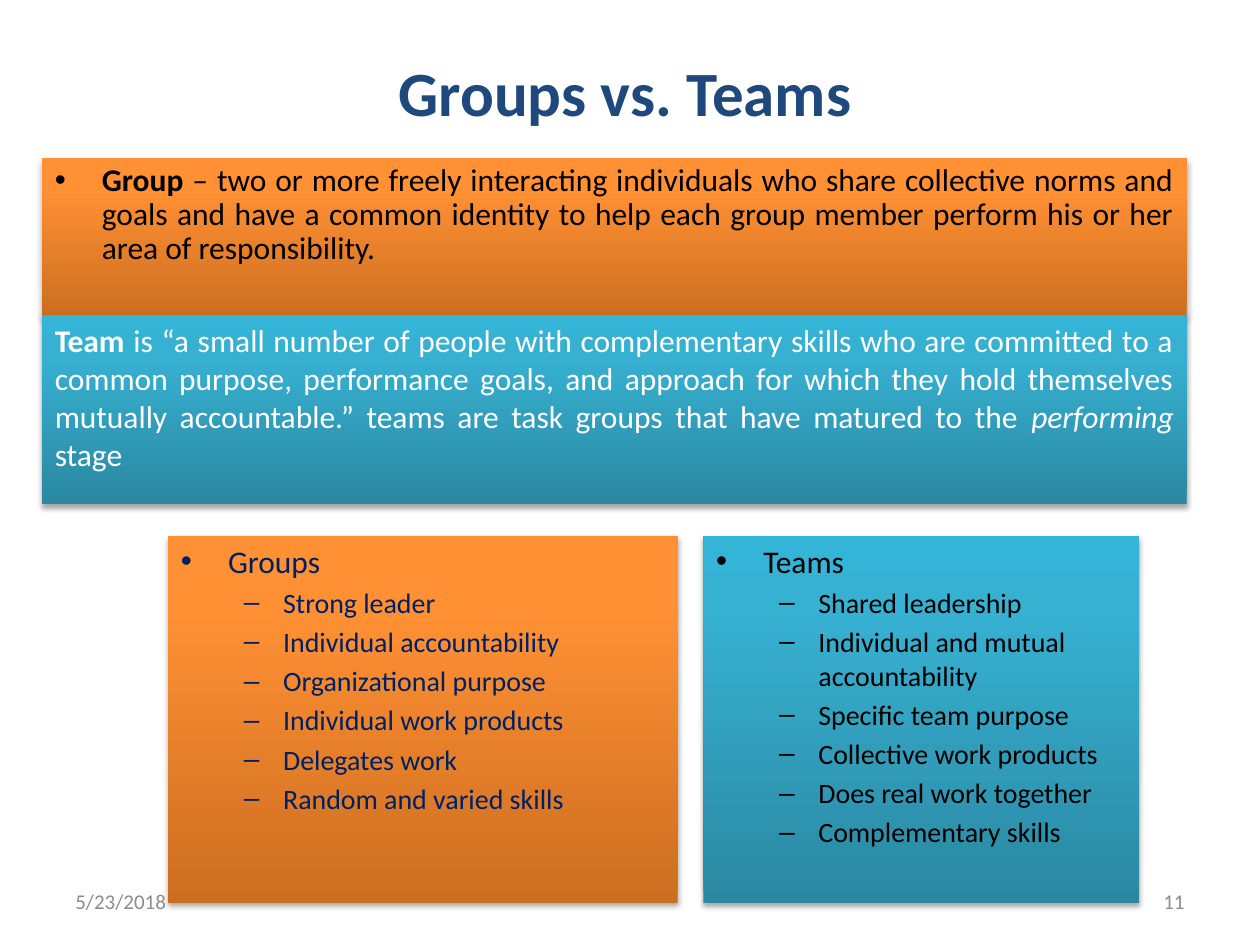
from pptx import Presentation
from pptx.dml.color import RGBColor
from pptx.enum.text import MSO_ANCHOR, MSO_AUTO_SIZE, PP_ALIGN
from pptx.oxml import parse_xml
from pptx.oxml.ns import nsdecls
from pptx.util import Cm, Pt

FONT = "Calibri"
TITLE_BLUE = RGBColor(0x1F, 0x49, 0x7D)
NAVY = RGBColor(0x00, 0x20, 0x60)
BLACK = RGBColor(0x00, 0x00, 0x00)
WHITE = RGBColor(0xFF, 0xFF, 0xFF)
GRAY = RGBColor(0x8C, 0x8C, 0x8C)
# Gradient colours from the bottom edge to the top edge
ORANGE = (RGBColor(0xCC, 0x6E, 0x20), RGBColor(0xFF, 0x90, 0x34), RGBColor(0xFF, 0x91, 0x36))
TEAL = (RGBColor(0x2A, 0x88, 0xA2), RGBColor(0x37, 0xB1, 0xD2), RGBColor(0x34, 0xB4, 0xD6))


def style_panel(shape, box, gradient):
    """Place a placeholder and give it a vertical gradient and a soft shadow."""
    shape.left, shape.top, shape.width, shape.height = [Cm(value) for value in box]
    stops = "".join(
        f'<a:gs pos="{position}"><a:srgbClr val="{color}"/></a:gs>'
        for position, color in zip((0, 80000, 100000), gradient)
    )
    properties = shape._element.spPr
    properties.append(parse_xml(
        f'<a:gradFill {nsdecls("a")} rotWithShape="1"><a:gsLst>{stops}</a:gsLst>'
        '<a:lin ang="16200000" scaled="0"/></a:gradFill>'))
    properties.append(parse_xml(
        f'<a:effectLst {nsdecls("a")}><a:outerShdw blurRad="40000" dist="23000" '
        'dir="5400000" rotWithShape="0"><a:srgbClr val="000000">'
        '<a:alpha val="35000"/></a:srgbClr></a:outerShdw></a:effectLst>'))
    frame = shape.text_frame
    frame.auto_size = MSO_AUTO_SIZE.NONE
    frame.vertical_anchor = MSO_ANCHOR.TOP
    return frame


def set_font(paragraph, size, color):
    paragraph.font.name = FONT
    paragraph.font.size = Pt(size)
    paragraph.font.color.rgb = color


presentation = Presentation()
presentation.slide_width, presentation.slide_height = Cm(25.4), Cm(19.05)
slide = presentation.slides.add_slide(presentation.slide_layouts.get_by_name("Comparison"))
placeholders = {shape.placeholder_format.idx: shape for shape in slide.placeholders}

# Title
title = slide.shapes.title
title.left, title.top, title.width, title.height = Cm(2.12), Cm(0.85), Cm(20.96), Cm(1.98)
title.text_frame.text = "Groups vs. Teams"
title.text_frame.auto_size = MSO_AUTO_SIZE.NONE
title_paragraph = title.text_frame.paragraphs[0]
set_font(title_paragraph, 36, TITLE_BLUE)
title_paragraph.font.bold = True

# Definitions: runs are (text, bold, italic)
definitions = [
    (1, (0.85, 3.18, 23.07, 3.18), ORANGE, BLACK, [
        ("Group", True, False),
        (" – two or more freely interacting individuals who share collective norms and goals "
         "and have a common identity to help each group member perform his or her area of "
         "responsibility.", False, False),
    ]),
    (3, (0.85, 6.35, 23.07, 3.81), TEAL, WHITE, [
        ("Team ", True, False),
        ("is “a small number of people with complementary skills who are committed to a common "
         "purpose, performance goals, and approach for which they hold themselves mutually "
         "accountable.” teams are task groups that have matured to the ", False, False),
        ("performing ", False, True),
        ("stage", False, False),
    ]),
]
for index, box, gradient, color, runs in definitions:
    paragraph = style_panel(placeholders[index], box, gradient).paragraphs[0]
    paragraph.alignment = PP_ALIGN.JUSTIFY
    paragraph.space_before = Pt(0)
    set_font(paragraph, 18, color)
    for text, bold, italic in runs:
        run = paragraph.add_run()
        run.text = text
        run.font.bold, run.font.italic = bold, italic

# The group definition is a tightly spaced bullet
group_paragraph = placeholders[1].text_frame.paragraphs[0]
group_paragraph.line_spacing = 0.9
group_paragraph.space_before = Pt(3.6)
group_properties = group_paragraph._p.get_or_add_pPr()
group_properties.set("marL", str(Cm(0.95)))
group_properties.set("indent", str(-Cm(0.95)))
bullet_position = group_properties.index(group_properties.find("{*}defRPr"))
group_properties.insert(bullet_position, parse_xml(f'<a:buChar {nsdecls("a")} char="•"/>'))
group_properties.insert(bullet_position, parse_xml(f'<a:buFont {nsdecls("a")} typeface="Arial"/>'))

# Comparison lists
lists = [
    (2, (3.39, 10.8, 10.27, 7.41), ORANGE, NAVY, "Groups", [
        "Strong leader", "Individual accountability", "Organizational purpose",
        "Individual work products", "Delegates work", "Random and varied skills",
    ]),
    (4, (14.18, 10.8, 8.79, 7.41), TEAL, BLACK, "Teams", [
        "Shared leadership", "Individual and mutual accountability", "Specific team purpose",
        "Collective work products", "Does real work together", "Complementary skills",
    ]),
]
for index, box, gradient, color, heading, items in lists:
    frame = style_panel(placeholders[index], box, gradient)
    frame.text = "\n".join([heading, *items])
    for number, paragraph in enumerate(frame.paragraphs):
        paragraph.level = 1 if number else 0
        set_font(paragraph, 16 if number else 18, color)

# Date and slide number
for left, text, alignment in [
    (1.27, "5/23/2018", PP_ALIGN.LEFT),
    (18.21, "11", PP_ALIGN.RIGHT),
]:
    footer = slide.shapes.add_textbox(Cm(left), Cm(17.65), Cm(5.92), Cm(1.02))
    footer.text_frame.word_wrap = True
    footer.text_frame.vertical_anchor = MSO_ANCHOR.MIDDLE
    footer.text_frame.text = text
    paragraph = footer.text_frame.paragraphs[0]
    paragraph.alignment = alignment
    set_font(paragraph, 12, GRAY)

presentation.save("out.pptx")
